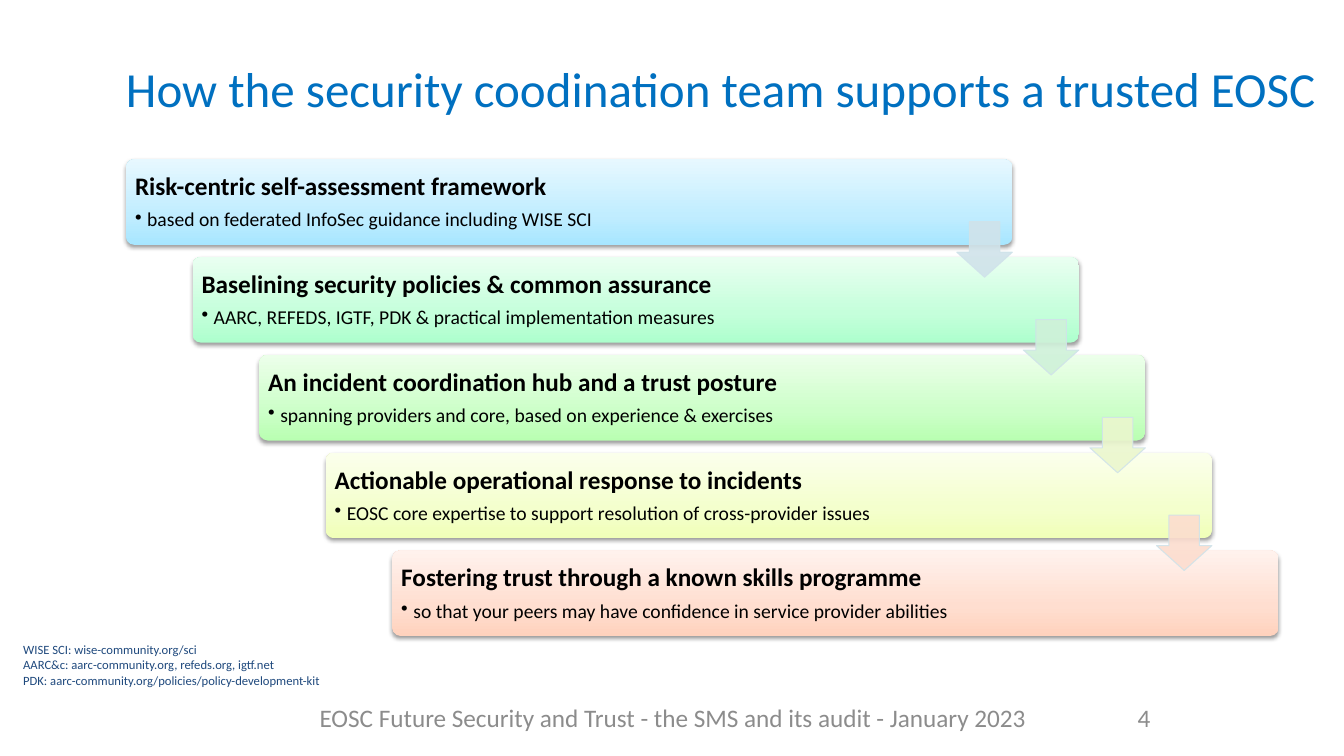
from copy import deepcopy

from lxml.etree import SubElement
from pptx import Presentation
from pptx.dml.color import RGBColor
from pptx.enum.shapes import MSO_SHAPE
from pptx.enum.text import MSO_ANCHOR, PP_ALIGN
from pptx.oxml.ns import qn
from pptx.util import Emu, Pt

STEPS = [
    ("Risk-centric self-assessment framework",
     "based on federated InfoSec guidance including WISE SCI",
     ("A7E6FF", "C1EDFF", "E7F8FF"), "D0E3EA"),
    ("Baselining security policies & common assurance",
     "AARC, REFEDS, IGTF, PDK & practical implementation measures",
     ("ADFFCD", "C5FFDB", "E9FFF1"), "CFF1D9"),
    ("An incident coordination hub and a trust posture",
     "spanning providers and core, based on experience & exercises",
     ("B9FFB2", "CDFFC9", "ECFFEA"), "EBF7CE"),
    ("Actionable operational response to incidents",
     "EOSC core expertise to support resolution of cross-provider issues",
     ("F0FFB8", "F4FFCD", "FBFFEC"), "FCDDCF"),
    ("Fostering trust through a known skills programme",
     "so that your peers may have confidence in service provider abilities",
     ("FFD2BD", "FFDED0", "FFF2ED"), None),
]
REFERENCES = [
    "WISE SCI: wise-community.org/sci",
    "AARC&c: aarc-community.org, refeds.org, igtf.net",
    "PDK: aarc-community.org/policies/policy-development-kit",
]
STEP_X, STEP_Y = 66, 97


def px(length):
    return Emu(length * 9144)


def color(value):
    return RGBColor.from_string(value)


def apply(target, values):
    for name, value in values.items():
        setattr(target, name, value)


class StaircaseSlide:
    """Draws styled elements on one slide."""

    font_name = "Calibri"
    arrow_line = "D0E3EA"
    heading = {"line_spacing": 0.9, "space_after": Pt(6.3)}
    detail = {"line_spacing": 0.9, "space_after": Pt(2.1), "level": 1}

    def __init__(self, presentation):
        self.slide = presentation.slides.add_slide(presentation.slide_layouts[6])

    def text_box(self, box, margins=(0, 0, 0, 0), **frame_values):
        frame = self.slide.shapes.add_textbox(*map(px, box)).text_frame
        sides = ("margin_left", "margin_top", "margin_right", "margin_bottom")
        apply(frame, dict(zip(sides, map(px, margins))))
        apply(frame, {"word_wrap": True, **frame_values})
        return frame

    def add_text(self, paragraph, text, size, text_color, bold=False, **values):
        apply(paragraph, values)
        run = paragraph.add_run()
        run.text = text
        apply(run.font, {"name": self.font_name, "size": Pt(size), "bold": bold})
        run.font.color.rgb = color(text_color)

    def label(self, box, lines, size, text_color, margins=(0, 0, 0, 0),
              alignment=PP_ALIGN.LEFT, **frame_values):
        frame = self.text_box(box, margins, **frame_values)
        for index, line in enumerate(lines):
            paragraph = frame.add_paragraph() if index else frame.paragraphs[0]
            self.add_text(paragraph, line, size, text_color, alignment=alignment)

    def bullet(self, paragraph):
        properties = paragraph._p.get_or_add_pPr()
        properties.set("marL", str(px(12)))
        properties.set("indent", str(px(-12)))
        SubElement(properties, qn("a:buChar"), char="•")

    def preset(self, kind, box, adjustments):
        shape = self.slide.shapes.add_shape(kind, *map(px, box))
        shape.shadow.inherit = False
        for index, value in enumerate(adjustments):
            shape.adjustments[index] = value
        return shape

    def gradient(self, shape, colors):
        shape.fill.gradient()
        shape.fill.gradient_angle = 90
        stop_list = shape._element.spPr.find(".//" + qn("a:gsLst"))
        stop_list.insert(1, deepcopy(stop_list[0]))
        for stop, position, value in zip(shape.fill.gradient_stops, (0, 0.35, 1), colors):
            stop.position = position
            stop.color.rgb = color(value)

    def drop_shadow(self, shape):
        effects = shape._element.spPr.find(qn("a:effectLst"))
        shadow = SubElement(effects, qn("a:outerShdw"), blurRad="40000",
                            dist="20000", dir="5400000", rotWithShape="0")
        black = SubElement(shadow, qn("a:srgbClr"), val="000000")
        SubElement(black, qn("a:alpha"), val="38000")

    def step(self, left, top, title, detail, colors):
        card = self.preset(MSO_SHAPE.ROUNDED_RECTANGLE, (left, top, 879, 85), (0.1,))
        self.gradient(card, colors)
        card.line.fill.background()
        self.drop_shadow(card)
        frame = self.text_box((left + 2, top + 3, 753, 80), (7, 7, 8, 7),
                              vertical_anchor=MSO_ANCHOR.MIDDLE)
        self.add_text(frame.paragraphs[0], title, 18, "000000", True, **self.heading)
        paragraph = frame.add_paragraph()
        self.bullet(paragraph)
        self.add_text(paragraph, detail, 14, "000000", **self.detail)

    def arrow(self, left, top, fill_color):
        arrow = self.preset(MSO_SHAPE.DOWN_ARROW, (left, top, 55, 55), (0.55, 0.45))
        arrow.line.width = Pt(0.75)
        for fill, value in ((arrow.fill, fill_color), (arrow.line.fill, self.arrow_line)):
            fill.solid()
            fill.fore_color.rgb = color(value)
        for element in arrow._element.spPr.findall(".//" + qn("a:srgbClr")):
            SubElement(element, qn("a:alpha"), val="90000")


def main():
    presentation = Presentation()
    apply(presentation, {"slide_width": px(1333), "slide_height": px(750)})
    slide = StaircaseSlide(presentation)
    slide.label((125, 58, 1183, 118),
                ["How the security coodination team supports a trusted EOSC"],
                35, "0070C0", word_wrap=False)
    slide.label((317, 697, 737, 38),
                ["EOSC Future Security and Trust - the SMS and its audit - January 2023"],
                18, "8C8C8C")
    for index, (title, detail, colors, _) in enumerate(STEPS):
        slide.step(125 + index * STEP_X, 158 + index * STEP_Y, title, detail, colors)
    for index, (*_, arrow_color) in enumerate(STEPS[:-1]):
        slide.arrow(949 + index * STEP_X, 220 + index * STEP_Y, arrow_color)
    slide.label((17, 631, 361, 57), REFERENCES, 9, "1F497D", (6, 6, 6, 6),
                vertical_anchor=MSO_ANCHOR.MIDDLE)
    slide.label((1083, 697, 58, 38), ["4"], 18, "8C8C8C", alignment=PP_ALIGN.RIGHT)
    presentation.save("out.pptx")


if __name__ == "__main__":
    main()
